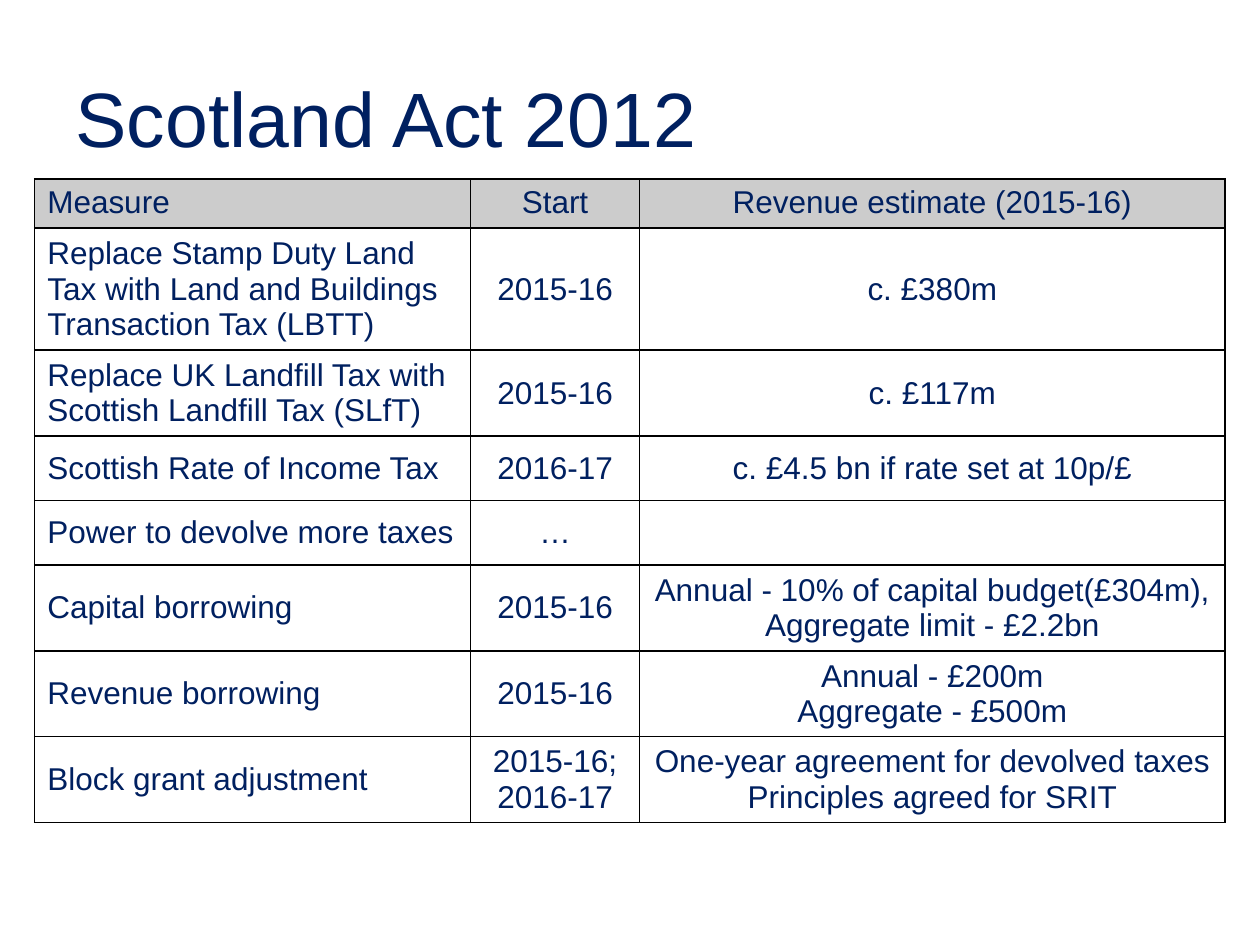
from lxml.etree import SubElement
from pptx import Presentation
from pptx.dml.color import RGBColor
from pptx.enum.text import MSO_ANCHOR, PP_ALIGN
from pptx.oxml.ns import qn
from pptx.util import Cm, Pt

ROWS = [
    ("Measure", "Start", "Revenue estimate (2015-16)"),
    ("Replace Stamp Duty Land Tax with Land and Buildings Transaction Tax (LBTT)", "2015-16", "c. £380m"),
    ("Replace UK Landfill Tax with Scottish Landfill Tax (SLfT)", "2015-16", "c. £117m"),
    ("Scottish Rate of Income Tax", "2016-17", "c. £4.5 bn if rate set at 10p/£"),
    ("Power to devolve more taxes", "…", ""),
    ("Capital borrowing", "2015-16", "Annual - 10% of capital budget(£304m), Aggregate limit - £2.2bn"),
    ("Revenue borrowing", "2015-16", "Annual - £200m\nAggregate - £500m"),
    ("Block grant adjustment", "2015-16; 2016-17", "One-year agreement for devolved taxes\nPrinciples agreed for SRIT"),
]
COLUMN_WIDTHS = [8.79, 3.4, 11.81]
ROW_HEIGHTS = [0.99, 2.46, 1.73, 1.3, 1.3, 1.73, 1.73, 1.73]


def color(value):
    return RGBColor.from_string(value)


def apply(target, values):
    for name, value in values.items():
        setattr(target, name, value)


class SlideBuilder:
    font_name = "Arial"
    text_color = "002060"
    border_color = "000000"
    header_fill = "CCCCCC"
    body_fill = "FFFFFF"

    def __init__(self, presentation):
        self.slide = presentation.slides.add_slide(presentation.slide_layouts[5])

    def format_paragraph(self, paragraph, size, alignment):
        paragraph.alignment = alignment
        apply(paragraph.font, {"name": self.font_name, "size": Pt(size), "bold": False})
        paragraph.font.color.rgb = color(self.text_color)

    def title(self, text, left, top, width, height):
        shape = self.slide.shapes.title
        apply(shape, {"left": Cm(left), "top": Cm(top), "width": Cm(width), "height": Cm(height)})
        frame = shape.text_frame
        apply(frame, {"text": text, "vertical_anchor": MSO_ANCHOR.MIDDLE, "word_wrap": True})
        self.format_paragraph(frame.paragraphs[0], 44, PP_ALIGN.LEFT)

    def border(self, cell):
        properties = cell._tc.get_or_add_tcPr()
        for position, side in enumerate(("lnL", "lnR", "lnT", "lnB")):
            line = SubElement(properties, qn(f"a:{side}"), w=str(Pt(1)))
            fill = SubElement(line, qn("a:solidFill"))
            SubElement(fill, qn("a:srgbClr"), val=self.border_color)
            properties.remove(line)
            properties.insert(position, line)

    def cell(self, cell, text, is_header, alignment):
        cell.text = text
        cell.vertical_anchor = MSO_ANCHOR.TOP if is_header else MSO_ANCHOR.MIDDLE
        cell.fill.solid()
        cell.fill.fore_color.rgb = color(self.header_fill if is_header else self.body_fill)
        for paragraph in cell.text_frame.paragraphs:
            self.format_paragraph(paragraph, 18, alignment)
        self.border(cell)

    def table(self, rows, left, top, column_widths, row_heights):
        table = self.slide.shapes.add_table(
            len(rows), len(column_widths), Cm(left), Cm(top),
            Cm(sum(column_widths)), Cm(sum(row_heights))).table
        for column, width in zip(table.columns, column_widths):
            column.width = Cm(width)
        for row, height in zip(table.rows, row_heights):
            row.height = Cm(height)
        for row_index, texts in enumerate(rows):
            for column_index, text in enumerate(texts):
                alignment = PP_ALIGN.CENTER if column_index else PP_ALIGN.LEFT
                self.cell(table.cell(row_index, column_index), text, row_index == 0, alignment)


def main():
    presentation = Presentation()
    apply(presentation, {"slide_width": Cm(25.4), "slide_height": Cm(19.05)})
    builder = SlideBuilder(presentation)
    builder.title("Scotland Act 2012", 1.27, 0.76, 22.86, 3.18)
    builder.table(ROWS, 0.7, 3.61, COLUMN_WIDTHS, ROW_HEIGHTS)
    presentation.save("out.pptx")


if __name__ == "__main__":
    main()
